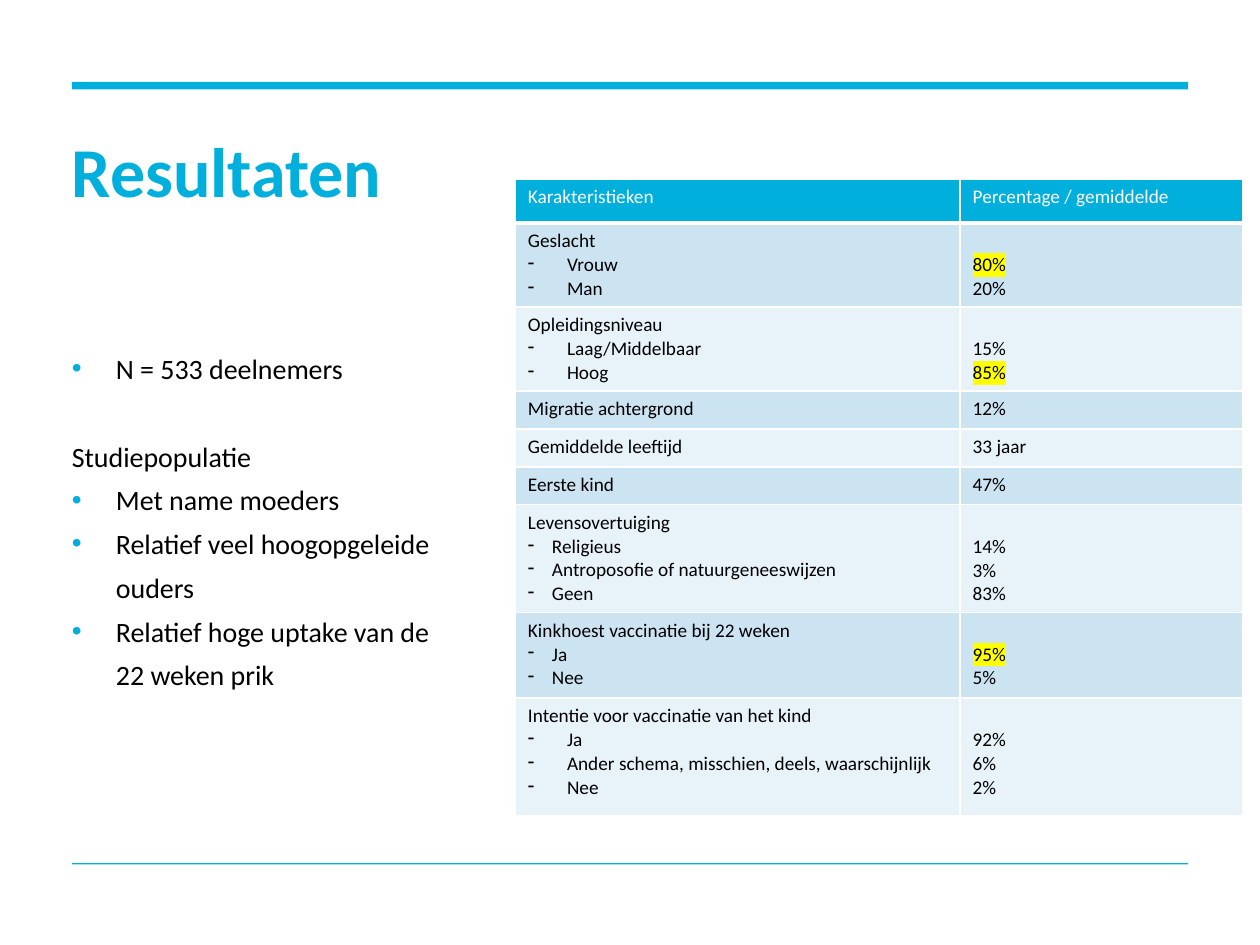
from dataclasses import dataclass

from lxml.etree import SubElement
from pptx import Presentation
from pptx.dml.color import RGBColor as Color
from pptx.enum.shapes import MSO_SHAPE as Preset
from pptx.enum.text import MSO_ANCHOR as Anchor, MSO_AUTO_SIZE as AutoSize, PP_ALIGN as Align
from pptx.oxml.ns import qn
from pptx.util import Inches, Pt


@dataclass(frozen=True)
class Theme:
    font: str = "Calibri"
    accent: str = "00AFDC"
    text: str = "000000"
    light: str = "FFFFFF"
    bands: tuple = ("CCE3F2", "E7F2F9")
    marker: str = "FFFF00"
    title_size: int = 40
    body_size: int = 16
    table_size: int = 11


THEME = Theme()
WIDTH, HEIGHT = 10, 7.5
MARGIN = 0.057 * WIDTH
CONTENT_WIDTH = WIDTH - 2 * MARGIN
BODY_LEADING = 25
CELL_MARGIN, CELL_LINE = 0.05, 0.19
WIDE, NARROW = 0.31, 0.19

BODY = [
    ("N = 533 deelnemers", True),
    ("Studiepopulatie", False),
    ("Met name moeders", True),
    ("Relatief veel hoogopgeleide ouders", True),
    ("Relatief hoge uptake van de 22 weken prik", True),
]
HEADINGS = ("Karakteristieken", "Percentage / gemiddelde")
COLUMN_WIDTHS = (3.53, 2.24)
HEADER_HEIGHT = 0.35
GROUPS = [
    (0.65, "Geslacht", WIDE, [("Vrouw", "80%"), ("Man", "20%")]),
    (0.65, "Opleidingsniveau", WIDE, [("Laag/Middelbaar", "15%"), ("Hoog", "85%")]),
    (0.3, "Migratie achtergrond", 0, "12%"),
    (0.3, "Gemiddelde leeftijd", 0, "33 jaar"),
    (0.3, "Eerste kind", 0, "47%"),
    (0.83, "Levensovertuiging", NARROW,
     [("Religieus", "14%"), ("Antroposofie of natuurgeneeswijzen", "3%"), ("Geen", "83%")]),
    (0.68, "Kinkhoest vaccinatie bij 22 weken", NARROW, [("Ja", "95%"), ("Nee", "5%")]),
    (0.93, "Intentie voor vaccinatie van het kind", WIDE,
     [("Ja", "92%"), ("Ander schema, misschien, deels, waarschijnlijk", "6%"), ("Nee", "2%")]),
]
HIGHLIGHTED = {"80%", "85%", "95%"}


def style(paragraph, size, color, bold=False):
    font = paragraph.font
    font.name, font.size, font.bold = THEME.font, Pt(size), bold
    font.color.rgb = Color.from_string(color)


def set_bullet(paragraph, character="", indent=0, color=None):
    properties = paragraph._p.get_or_add_pPr()
    properties.set("marL", str(Inches(indent)))
    properties.set("indent", str(-Inches(indent)))
    if color:
        SubElement(SubElement(properties, qn("a:buClr")), qn("a:srgbClr"), val=color)
    if character:
        SubElement(properties, qn("a:buChar"), char=character)
    else:
        SubElement(properties, qn("a:buNone"))


def add_paragraphs(frame, count):
    for _ in range(count - 1):
        frame.add_paragraph()
    return frame.paragraphs


def add_rule(slide, top, height):
    rule = slide.shapes.add_shape(
        Preset.RECTANGLE, Inches(MARGIN), Inches(top), Inches(CONTENT_WIDTH), Inches(height))
    rule.shadow.inherit = False
    rule.fill.solid()
    rule.fill.fore_color.rgb = Color.from_string(THEME.accent)
    rule.line.fill.background()


def place(placeholder, top, width, height, anchor):
    placeholder.left, placeholder.top = Inches(MARGIN), Inches(top)
    placeholder.width, placeholder.height = Inches(width), Inches(height)
    frame = placeholder.text_frame
    frame.margin_left = frame.margin_right = frame.margin_top = frame.margin_bottom = 0
    frame.word_wrap, frame.auto_size = True, AutoSize.NONE
    frame.vertical_anchor = anchor
    return frame


def fill_title(slide, text):
    frame = place(slide.shapes.title, 1.1, CONTENT_WIDTH, 0.58, Anchor.MIDDLE)
    frame.text = text
    paragraph = frame.paragraphs[0]
    paragraph.alignment, paragraph.line_spacing = Align.LEFT, Pt(42)
    style(paragraph, THEME.title_size, THEME.accent, bold=True)


def fill_body(slide):
    frame = place(slide.placeholders[1], 2.71, 2.93, 3.45, Anchor.TOP)
    for paragraph, (text, bulleted) in zip(add_paragraphs(frame, len(BODY)), BODY):
        paragraph.text = text
        if bulleted:
            set_bullet(paragraph, "•", 0.35, THEME.accent)
        else:
            set_bullet(paragraph)
        paragraph.line_spacing = Pt(BODY_LEADING)
        paragraph.space_before = Pt(0 if bulleted else BODY_LEADING)
        style(paragraph, THEME.body_size, THEME.text)


def set_borders(cell, bottom):
    properties = cell._tc.get_or_add_tcPr()
    for position, (side, width) in enumerate(zip("LRTB", (1, 1, 1, bottom))):
        line = SubElement(properties, qn(f"a:ln{side}"), w=str(Pt(width)))
        fill = SubElement(line, qn("a:solidFill"))
        SubElement(fill, qn("a:srgbClr"), val=THEME.light)
        properties.insert(position, line)


def highlight(run):
    element = SubElement(run._r.get_or_add_rPr(), qn("a:highlight"))
    SubElement(element, qn("a:srgbClr"), val=THEME.marker)


def fill_cell(cell, lines, fill, color=THEME.text, indent=0, bottom=1):
    for index, paragraph in enumerate(add_paragraphs(cell.text_frame, len(lines))):
        run = paragraph.add_run()
        run.text = lines[index]
        if run.text in HIGHLIGHTED:
            highlight(run)
        if indent and index:
            set_bullet(paragraph, "-", indent)
        style(paragraph, THEME.table_size, color)
    cell.fill.solid()
    cell.fill.fore_color.rgb = Color.from_string(fill)
    set_borders(cell, bottom)


def add_characteristics(slide):
    heights = [HEADER_HEIGHT] + [group[0] for group in GROUPS]
    table = slide.shapes.add_table(
        len(heights), len(COLUMN_WIDTHS), Inches(4.09), Inches(1.42),
        Inches(sum(COLUMN_WIDTHS)), Inches(sum(heights))).table
    for column, width in zip(table.columns, COLUMN_WIDTHS):
        column.width = Inches(width)
    for row, height in zip(table.rows, heights):
        row.height = Inches(height)
    for column, heading in enumerate(HEADINGS):
        fill_cell(table.cell(0, column), [heading], THEME.accent, THEME.light, bottom=3)
    for row, (_, label, indent, entries) in enumerate(GROUPS, 1):
        fill = THEME.bands[(row - 1) % 2]
        label_cell, value_cell = table.cell(row, 0), table.cell(row, 1)
        if indent:
            names, values = zip(*entries)
            value_cell.margin_top = Inches(CELL_MARGIN + CELL_LINE)
        else:
            names, values = (), (entries,)
        fill_cell(label_cell, (label, *names), fill, indent=indent)
        fill_cell(value_cell, values, fill)


def main():
    presentation = Presentation()
    presentation.slide_width, presentation.slide_height = Inches(WIDTH), Inches(HEIGHT)
    slide = presentation.slides.add_slide(presentation.slide_layouts[1])
    add_rule(slide, 0.65, 0.06)
    add_rule(slide, 6.85, 0.01)
    fill_title(slide, "Resultaten")
    fill_body(slide)
    add_characteristics(slide)
    presentation.save("out.pptx")


if __name__ == "__main__":
    main()
